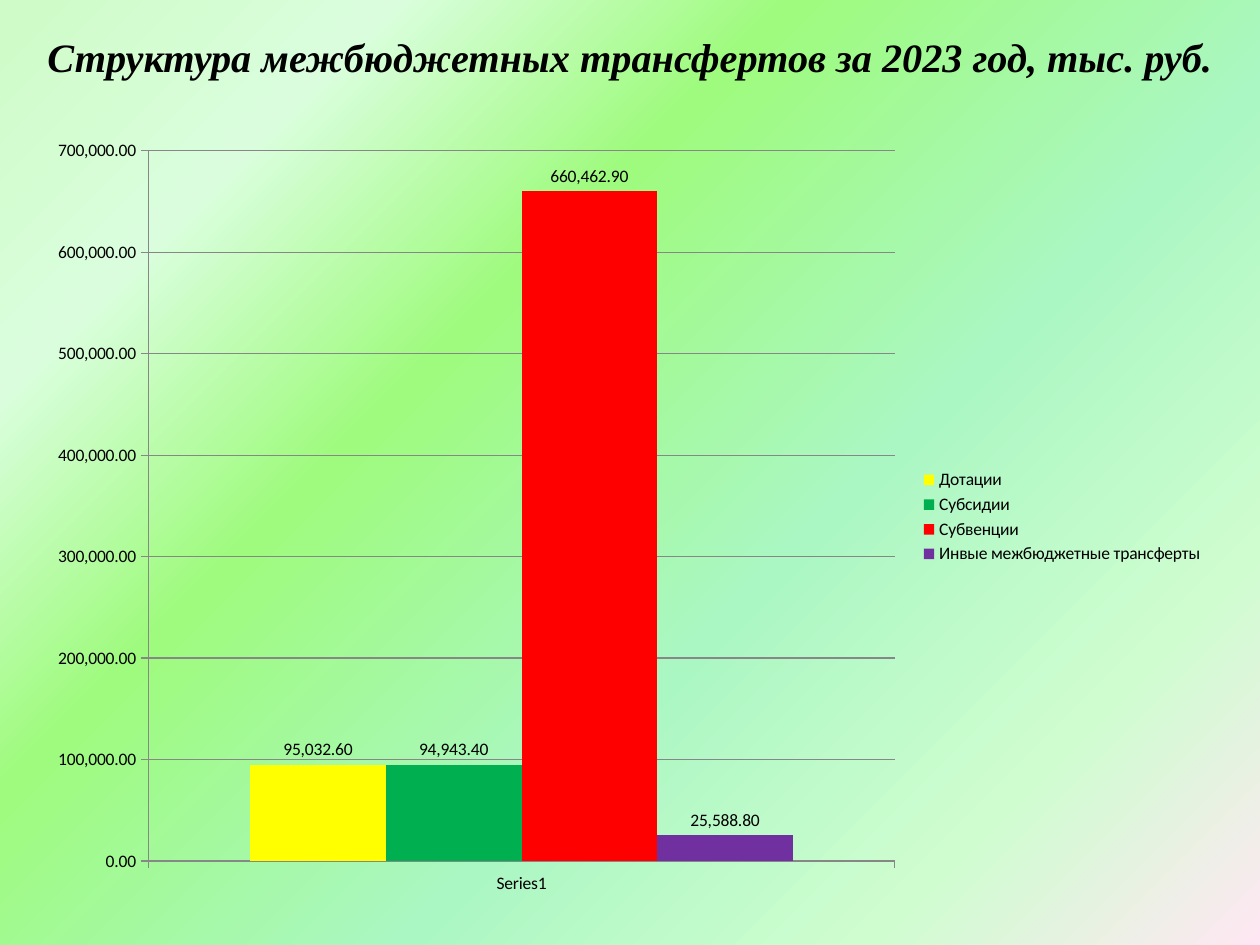
import dataclasses

import lxml.etree
import pptx
import pptx.chart.data
import pptx.dml.color
import pptx.enum.chart
import pptx.enum.text
import pptx.oxml.ns
import pptx.util


@dataclasses.dataclass(frozen=True)
class Theme:
    """Colours, fonts and type sizes of the slide."""

    text: str = "000000"
    axis: str = "878787"
    title_font: str = "Times New Roman"
    chart_font: str = "Calibri"
    title_size: int = 23
    chart_size: int = 10
    background: tuple = (
        (0, "CEFBC7"), (18, "DAFEDD"), (36, "9EFB7D"),
        (61, "ABF7C3"), (82, "CFFDD0"), (100, "FEE7F2"),
    )


THEME = Theme()
PIXELS_PER_INCH = 126
TITLE = "Структура межбюджетных трансфертов за 2023 год, тыс. руб."
CATEGORY = "Series1"
TRANSFERS = (
    ("Дотации", 95032.6, "FFFF00"),
    ("Субсидии", 94943.4, "00B050"),
    ("Субвенции", 660462.9, "FF0000"),
    ("Инвые межбюджетные трансферты", 25588.8, "7030A0"),
)


def px(length):
    """Turn pixels into EMU."""
    return pptx.util.Emu(round(length * 914400 / PIXELS_PER_INCH))


def rgb(value):
    """Turn a hex string into a colour."""
    return pptx.dml.color.RGBColor.from_string(value)


def style_font(font, name, size):
    """Set the face, size and text colour of a font."""
    font.name = name
    font.size = pptx.util.Pt(size)
    font.color.rgb = rgb(THEME.text)


def paint_background(slide):
    """Fill the slide with the diagonal gradient."""
    fill = slide.background.fill
    fill.gradient()
    fill.gradient_angle = 315
    qn = pptx.oxml.ns.qn
    stops = slide.element.find(".//" + qn("a:gsLst"))
    for stop in list(stops):
        stops.remove(stop)
    for position, colour in THEME.background:
        stop = lxml.etree.SubElement(stops, qn("a:gs"), pos=str(position * 1000))
        lxml.etree.SubElement(stop, qn("a:srgbClr"), val=colour)


def add_title(slide, left, top, width, height):
    """Place the heading in its box."""
    shape = slide.shapes.add_textbox(px(left), px(top), px(width), px(height))
    frame = shape.text_frame
    frame.word_wrap = True
    frame.auto_size = pptx.enum.text.MSO_AUTO_SIZE.SHAPE_TO_FIT_TEXT
    run = frame.paragraphs[0].add_run()
    run.text = TITLE
    style_font(run.font, THEME.title_font, THEME.title_size)
    run.font.bold = True
    run.font.italic = True


def set_plot_layout(chart, **fractions):
    """Fix the inner plot area as fractions of the chart."""
    qn = pptx.oxml.ns.qn
    plot_area = chart.element.find(".//" + qn("c:plotArea"))
    for layout in plot_area.findall(qn("c:layout")):
        plot_area.remove(layout)
    layout = lxml.etree.Element(qn("c:layout"))
    plot_area.insert(0, layout)
    manual = lxml.etree.SubElement(layout, qn("c:manualLayout"))
    settings = {"layoutTarget": "inner", "xMode": "edge", "yMode": "edge", **fractions}
    for name, value in settings.items():
        lxml.etree.SubElement(manual, qn("c:" + name), val=str(value))


def style_axes(chart):
    """Set ticks, lines, scale and number format of both axes."""
    for axis in (chart.category_axis, chart.value_axis):
        axis.major_tick_mark = pptx.enum.chart.XL_TICK_MARK.OUTSIDE
        axis.minor_tick_mark = pptx.enum.chart.XL_TICK_MARK.NONE
        axis.format.line.color.rgb = rgb(THEME.axis)
        axis.format.line.width = pptx.util.Pt(0.75)
    axis = chart.value_axis
    axis.minimum_scale = 0
    axis.maximum_scale = 700000
    axis.major_unit = 100000
    axis.has_major_gridlines = True
    axis.major_gridlines.format.line.color.rgb = rgb(THEME.axis)
    axis.major_gridlines.format.line.width = pptx.util.Pt(0.75)
    axis.tick_labels.number_format = "#,##0.00"
    axis.tick_labels.number_format_is_linked = False


def add_transfers_chart(slide, left, top, width, height):
    """Place the column chart of transfers in its box."""
    data = pptx.chart.data.CategoryChartData(number_format="#,##0.00")
    data.categories = [CATEGORY]
    for name, value, _ in TRANSFERS:
        data.add_series(name, [value])
    chart = slide.shapes.add_chart(
        pptx.enum.chart.XL_CHART_TYPE.COLUMN_CLUSTERED,
        px(left), px(top), px(width), px(height), data,
    ).chart
    style_font(chart.font, THEME.chart_font, THEME.chart_size)
    chart.has_title = False
    chart.has_legend = True
    chart.legend.position = pptx.enum.chart.XL_LEGEND_POSITION.RIGHT
    chart.legend.include_in_layout = False
    style_axes(chart)
    set_plot_layout(chart, x=0.096, y=0.033, w=0.632, h=0.906)
    plot = chart.plots[0]
    plot.gap_width = 150
    plot.overlap = 0
    plot.vary_by_categories = False
    for series, (_, _, colour) in zip(plot.series, TRANSFERS):
        series.format.fill.solid()
        series.format.fill.fore_color.rgb = rgb(colour)
        labels = series.data_labels
        labels.show_value = True
        labels.position = pptx.enum.chart.XL_LABEL_POSITION.OUTSIDE_END


def main():
    """Build the slide and save it."""
    presentation = pptx.Presentation()
    presentation.slide_width = px(1260)
    presentation.slide_height = px(945)
    slide = presentation.slides.add_slide(presentation.slide_layouts[6])
    paint_background(slide)
    add_transfers_chart(slide, 35, 125, 1181, 784)
    add_title(slide, 35, 26, 1221, 62)
    presentation.save("out.pptx")


if __name__ == "__main__":
    main()
